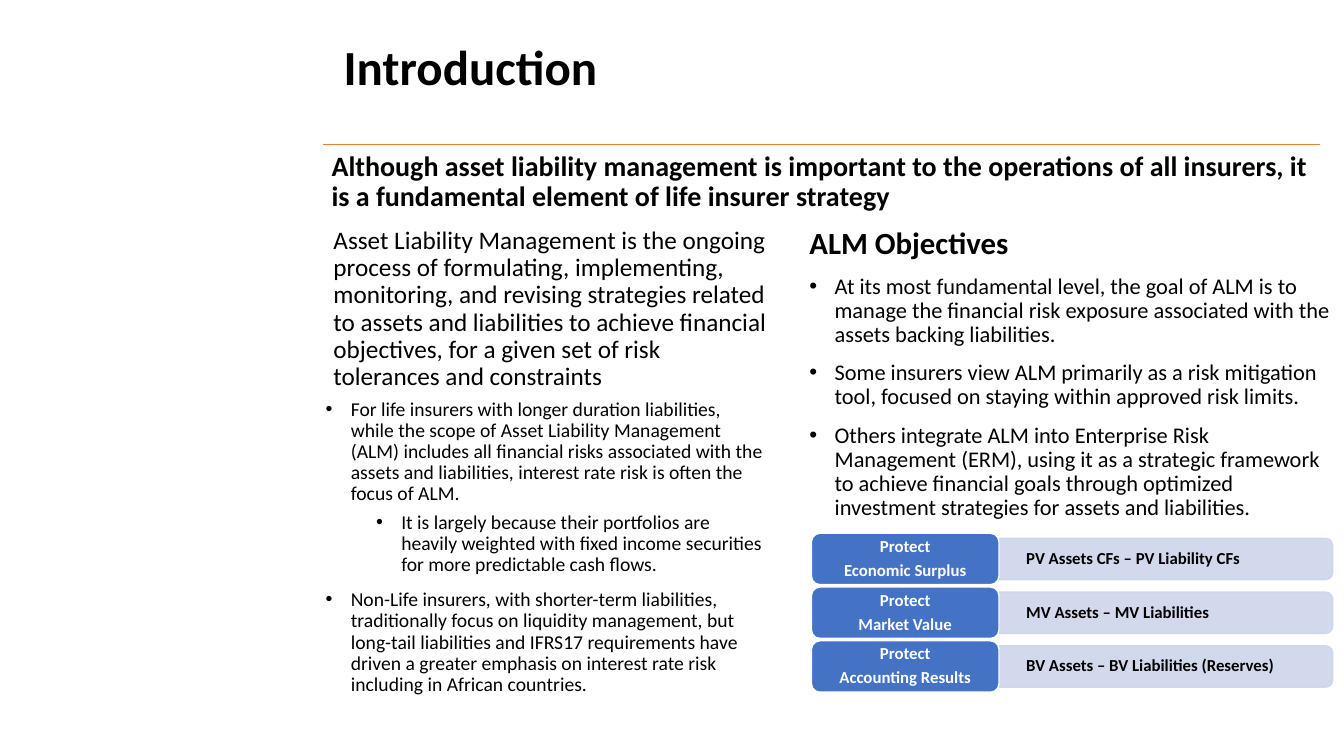
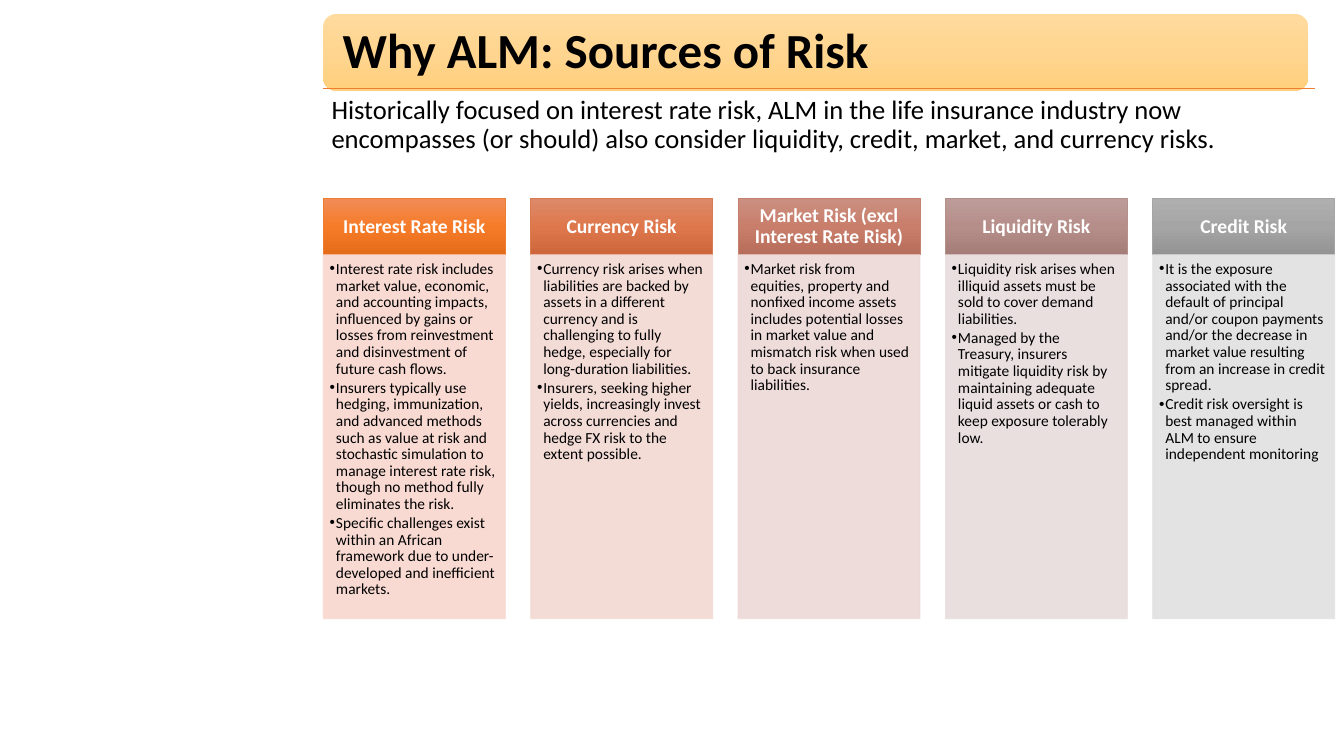
from copy import deepcopy
from dataclasses import dataclass

from lxml.etree import SubElement
from pptx import Presentation
from pptx.dml.color import RGBColor as RGB
from pptx.enum.shapes import MSO_CONNECTOR as LINK, MSO_SHAPE as FORM
from pptx.enum.text import MSO_ANCHOR as ANCHOR, MSO_AUTO_SIZE as FIT, PP_ALIGN as ALIGN
from pptx.oxml.ns import qn
from pptx.util import Pt


@dataclass(frozen=True)
class Theme:
    font: str = "Calibri"
    ink: str = "000000"
    white: str = "FFFFFF"
    rule: str = "ED7D31"
    blue: str = "4472C4"
    pale: str = "CFD5EA"
    bar: tuple = ("FFDB9E", "FFD590", "FFD07C")
    title: float = 35
    head: float = 22
    lead: float = 20
    wide: float = 19
    text: float = 18
    goal: float = 16
    note: float = 14
    label: float = 12
    small: float = 11


T = Theme()
LEFT = 231


def write(shape, lines, size, box=None, bold=False, ink=T.ink, pad=(7.2, 3.6, 7.2, 3.6),
          anchor=ANCHOR.TOP, align=ALIGN.LEFT, gap=0, lefts=(), hang=18):
    """Fill a shape with paragraphs; a left margin above zero gives a bullet."""
    if box:
        shape.left, shape.top, shape.width, shape.height = map(Pt, box)
    frame = shape.text_frame
    frame.text = "\n".join(lines)
    frame.word_wrap = True
    frame.auto_size = FIT.NONE
    frame.vertical_anchor = anchor
    (frame.margin_left, frame.margin_top,
     frame.margin_right, frame.margin_bottom) = map(Pt, pad)
    for i, par in enumerate(frame.paragraphs):
        left = lefts[i] if lefts else 0
        par.alignment = align
        par.line_spacing = 0.9
        par.space_before = Pt(gap if i else 0)
        par.space_after = Pt(0)
        props = par._p.get_or_add_pPr()
        props.set("marL", str(Pt(left)))
        props.set("indent", str(Pt(-hang if left else 0)))
        if left:
            SubElement(props, qn("a:buFont"), typeface="Arial")
            SubElement(props, qn("a:buChar"), char="•")
        else:
            SubElement(props, qn("a:buNone"))
        for run in par.runs:
            font = run.font
            font.name, font.size, font.bold = T.font, Pt(size), bold
            font.color.rgb = RGB.from_string(ink)
    return frame.paragraphs


def block(slide, form, box, fill, line=None, width=0.5, alpha=100):
    """Add a shape; three fill colours make a gradient from top to bottom."""
    shape = slide.shapes.add_shape(form, *map(Pt, box))
    shape.shadow.inherit = False
    if isinstance(fill, tuple):
        shape.fill.gradient()
        shape.fill.gradient_angle = 270
        stops = next(shape.element.spPr.iter(qn("a:gsLst")))
        stops.insert(1, deepcopy(stops[0]))
        for i, stop in enumerate(shape.fill.gradient_stops):
            stop.position = i / 2
            stop.color.rgb = RGB.from_string(fill[i])
    else:
        shape.fill.solid()
        shape.fill.fore_color.rgb = RGB.from_string(fill)
    if line:
        shape.line.color.rgb = RGB.from_string(line)
        shape.line.width = Pt(width)
    else:
        shape.line.fill.background()
    if alpha < 100:
        for tint in shape.element.spPr.iter(qn("a:srgbClr")):
            SubElement(tint, qn("a:alpha"), val=str(alpha * 1000))
    return shape


deck = Presentation()
deck.slide_width, deck.slide_height = Pt(960), Pt(540)

# Title, rule and lead of each slide: layout, texts, title box, rule, lead style
heads = [
    (4, "Introduction",
     "Although asset liability management is important to the operations of all insurers, "
     "it is a fundamental element of life insurer strategy",
     (234.7, 13.7, 655, 72), 103, 712, T.lead, True),
    (1, "Why ALM: Sources of Risk",
     "Historically focused on interest rate risk, ALM in the life insurance industry now "
     "encompasses (or should) also consider liquidity, credit, market, and currency risks.",
     (234, 13, 698, 49), 63.4, 708.5, T.wide, False),
]
for layout, title, lead, box, y, width, size, bold in heads:
    slide = deck.slides.add_slide(deck.slide_layouts[layout])
    write(slide.shapes.title, [title], T.title, box, True, pad=[10.8] * 4,
          anchor=ANCHOR.MIDDLE)
    rule = slide.shapes.add_connector(LINK.STRAIGHT, *map(Pt, (LEFT, y, LEFT + width, y)))
    rule.line.color.rgb = RGB.from_string(T.rule)
    rule.line.width = Pt(0.5)
    SubElement(rule.element.spPr, qn("a:effectLst"))
    write(slide.placeholders[1], [lead], size, (LEFT, y, width, 56), bold, pad=[5.8] * 4)

intro, risk = deck.slides

# Introduction: definition, notes and goals
write(intro.placeholders[3], [
    "Asset Liability Management is the ongoing process of formulating, implementing, "
    "monitoring, and revising strategies related to assets and liabilities to achieve "
    "financial objectives, for a given set of risk tolerances and constraints",
], T.text, (LEFT, 159, 327, 122))

notes = write(intro.placeholders[2], [
    "For life insurers with longer duration liabilities, while the scope of Asset Liability "
    "Management (ALM) includes all financial risks associated with the assets and "
    "liabilities, interest rate risk is often the focus of ALM.",
    "It is largely because their portfolios are heavily weighted with fixed income "
    "securities for more predictable cash flows.",
    "Non-Life insurers, with shorter-term liabilities, traditionally focus on liquidity "
    "management, but long-tail liabilities and IFRS17 requirements have driven a greater "
    "emphasis on interest rate risk including in African countries.",
], T.note, (225.4, 281.5, 327, 222), gap=10, lefts=(18, 54, 18))
notes[1].space_before = Pt(5)

goals = write(intro.placeholders[4], [
    "ALM Objectives",
    "At its most fundamental level, the goal of ALM is to manage the financial risk exposure "
    "associated with the assets backing liabilities.",
    "Some insurers view ALM primarily as a risk mitigation tool, focused on staying within "
    "approved risk limits.",
    "Others integrate ALM into Enterprise Risk Management (ERM), using it as a strategic "
    "framework to achieve financial goals through optimized investment strategies for assets "
    "and liabilities.",
], T.goal, (571, 159, 389, 220), gap=10, lefts=(0, 18, 18, 18))
goals[0].runs[0].font.size = Pt(T.head)
goals[0].runs[0].font.bold = True

# Introduction: what is protected and how it is measured
aims = [
    ("Economic Surplus", "PV Assets CFs – PV Liability CFs"),
    ("Market Value", "MV Assets – MV Liabilities"),
    ("Accounting Results", "BV Assets – BV Liabilities (Reserves)"),
]
tag_x, tag_w, tag_h = 579.6, 134, 36.7
pill_x, pill_w, pill_h = tag_x + tag_w, 238.3, 29.5
for i, (aim, gauge) in enumerate(aims):
    top = 380.9 + 38.4 * i
    mid = top + tag_h / 2
    pill = block(intro, FORM.ROUND_2_SAME_RECTANGLE,
                 (pill_x + (pill_w - pill_h) / 2, mid - pill_w / 2, pill_h, pill_w),
                 T.pale, T.pale, 1, 90)
    pill.rotation = 90
    box = (pill_x, mid - pill_h / 2, pill_w, pill_h)
    write(intro.shapes.add_textbox(*map(Pt, box)), [gauge], T.label, bold=True,
          pad=(19.4, 0, 19.4, 0), anchor=ANCHOR.MIDDLE)
    tag = block(intro, FORM.ROUNDED_RECTANGLE, (tag_x, top, tag_w, tag_h),
                T.blue, T.white, 1)
    write(tag, ["Protect", aim], T.label, bold=True, ink=T.white, pad=(5, 2, 5, 2),
          anchor=ANCHOR.MIDDLE, align=ALIGN.CENTER, gap=4.2)

# Sources of risk: bar behind the title, then one column per risk
bar = block(risk, FORM.ROUNDED_RECTANGLE, (LEFT, 10, 703.4, 54.7), T.bar)
risk.shapes.title.element.addprevious(bar.element)

risks = [
    ("Interest Rate Risk", ("F18C57", "F67B28", "E56C19"), "ED7D31", "F8D7CE", [
        "Interest rate risk includes market value, economic, and accounting impacts, "
        "influenced by gains or losses from reinvestment and disinvestment of future cash "
        "flows.",
        "Insurers typically use hedging, immunization, and advanced methods such as value at "
        "risk and stochastic simulation to manage interest rate risk, though no method fully "
        "eliminates the risk.",
        "Specific challenges exist within an African framework due to under-developed and "
        "inefficient markets."]),
    ("Currency Risk", ("DD8A6A", "DE774B", "CD673B"), "D87A51", "F2D8D2", [
        "Currency risk arises when liabilities are backed by assets in a different currency "
        "and is challenging to fully hedge, especially for long-duration liabilities.",
        "Insurers, seeking higher yields, increasingly invest across currencies and hedge FX "
        "risk to the extent possible."]),
    ("Market Risk (excl Interest Rate Risk)", ("CB8F81", "C97E6B", "B76D5B"),
     "C48170", "EDD9D7", [
        "Market risk from equities, property and nonfixed income assets includes potential "
        "losses in market value and mismatch risk when used to back insurance liabilities."]),
    ("Liquidity Risk", ("BC9C99", "B68E89", "A47C78"), "B4908B", "E7DCDC", [
        "Liquidity risk arises when illiquid assets must be sold to cover demand liabilities.",
        "Managed by the Treasury, insurers mitigate liquidity risk by maintaining adequate "
        "liquid assets or cash to keep exposure tolerably low."]),
    ("Credit Risk", ("AFAFAF", "A5A5A5", "939393"), "A5A5A5", "E1E1E1", [
        "It is the exposure associated with the default of principal and/or coupon payments "
        "and/or the decrease in market value resulting from an increase in credit spread.",
        "Credit risk oversight is best managed within ALM to ensure independent monitoring"]),
]
col_w, top, head_h, body_h = 130, 142, 40, 260
for i, (name, shades, edge, tint, points) in enumerate(risks):
    x = LEFT + 148.1 * i
    head = block(risk, FORM.RECTANGLE, (x, top, col_w, head_h), shades, edge)
    write(head, [name], T.note, bold=True, ink=T.white, pad=(7.9, 4.3, 7.9, 4.3),
          anchor=ANCHOR.MIDDLE, align=ALIGN.CENTER)
    body = block(risk, FORM.RECTANGLE, (x, top + head_h, col_w, body_h), tint, tint, alpha=90)
    write(body, points, T.small, pad=(4.5, 4.5, 6.5, 7), gap=1.65,
          lefts=[4.5] * len(points), hang=4.5)

deck.save("out.pptx")
